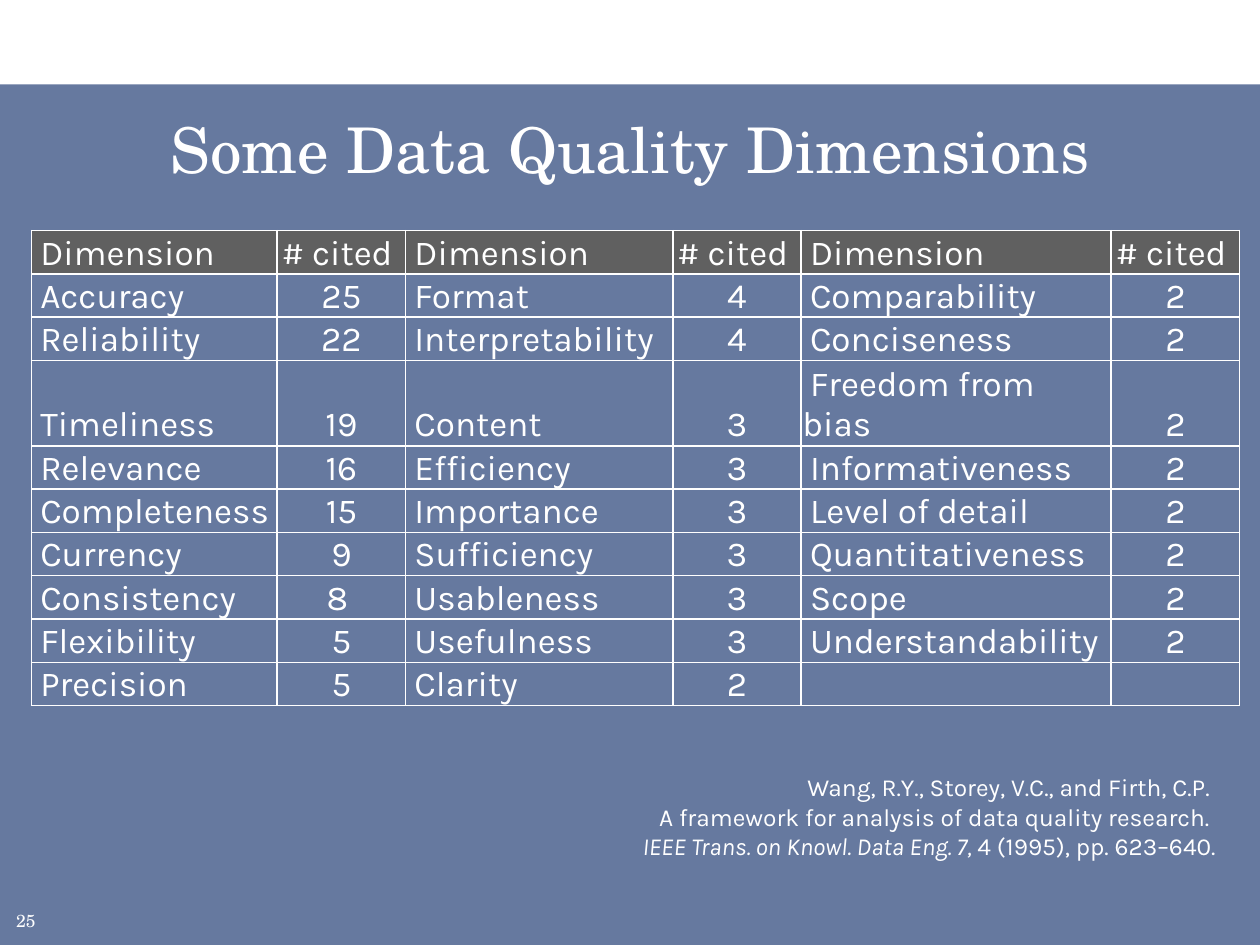
"""Build a slide that tables data quality dimensions by citation count."""
from dataclasses import dataclass
from typing import Any

import pptx
import pptx.dml.color
import pptx.enum.shapes
import pptx.enum.text
import pptx.oxml
import pptx.oxml.ns
import pptx.util
from pptx.util import Inches

ALIGN = pptx.enum.text.PP_ALIGN
ANCHOR = pptx.enum.text.MSO_ANCHOR


@dataclass(frozen=True)
class Theme:
    band: str = "002060"
    head: str = "606060"
    ink: str = "FFFFFF"
    serif: str = "TeX Gyre Schola"
    sans: str = "Karla"
    title: float = 36
    cell: float = 20
    cite: float = 14
    page: float = 10


@dataclass(frozen=True)
class Box:
    left: float
    top: float
    width: float
    height: float

    def lengths(self) -> list[int]:
        return [Inches(n) for n in (self.left, self.top, self.width, self.height)]


@dataclass(frozen=True)
class Entry:
    name: str
    count: str


THEME = Theme()
WIDTHS = (1.95, 1.02, 2.12, 1.02, 2.46, 1.02)
ROW = 0.21
HEAD = Entry("Dimension", "# cited ")
GROUPS = (
    (HEAD, Entry("Accuracy", "25"), Entry("Reliability", "22"),
     Entry("Timeliness", "19"), Entry("Relevance", "16"),
     Entry("Completeness", "15"), Entry("Currency", "9"),
     Entry("Consistency", "8 "), Entry("Flexibility", "5"),
     Entry("Precision", "5")),
    (HEAD, Entry("Format", "4"), Entry("Interpretability", "4"),
     Entry("Content", "3"), Entry("Efficiency", "3"),
     Entry("Importance", "3"), Entry("Sufficiency", "3"),
     Entry("Usableness", "3"), Entry("Usefulness", "3"),
     Entry("Clarity", "2")),
    (HEAD, Entry("Comparability", "2"), Entry("Conciseness", "2"),
     Entry("Freedom from bias", "2"), Entry("Informativeness", "2"),
     Entry("Level of detail", "2"), Entry("Quantitativeness", "2"),
     Entry("Scope", "2"), Entry("Understandability", "2"),
     Entry("", "")),
)
CITE = (
    (("Wang, R.Y., Storey, V.C., and Firth, C.P. ", False),),
    (("A framework for analysis of data quality research. ", False),),
    (("IEEE Trans. on Knowl. Data Eng. 7, ", True),
     ("4 (1995), pp. 623–640.", False)),
)


def paint(fill: Any, color: str) -> None:
    fill.solid()
    fill.fore_color.rgb = pptx.dml.color.RGBColor.from_string(color)


def write(para: Any, text: str, *, size: float, face: str = THEME.sans,
          align: Any = ALIGN.LEFT, slant: bool = False) -> None:
    para.alignment = align
    para.font.size = pptx.util.Pt(size)
    if text:
        run = para.add_run()
        run.text = text
        font = run.font
        font.name, font.size = face, pptx.util.Pt(size)
        font.bold, font.italic = False, slant
        font.color.rgb = pptx.dml.color.RGBColor.from_string(THEME.ink)


def edge(cell: Any) -> None:
    props = cell._tc.get_or_add_tcPr()
    for place, side in enumerate(("lnL", "lnR", "lnT", "lnB")):
        line = pptx.oxml.parse_xml(
            f'<a:{side} {pptx.oxml.ns.nsdecls("a")} w="12700"><a:solidFill>'
            f'<a:srgbClr val="{THEME.ink}"/></a:solidFill></a:{side}>')
        props.insert(place, line)


def fill_cell(cell: Any, text: str, head: bool, label: bool) -> None:
    cell.margin_left = cell.margin_right = cell.margin_top = Inches(0.01)
    cell.margin_bottom = 0
    cell.vertical_anchor = ANCHOR.BOTTOM
    if head:
        paint(cell.fill, THEME.head)
    else:
        cell.fill.background()
    edge(cell)
    para = cell.text_frame.paragraphs[0]
    if label:
        para._p.get_or_add_pPr().set("indent", str(Inches(0.06)))
    write(para, text, size=THEME.cell,
          align=ALIGN.LEFT if label else ALIGN.CENTER)


def add_grid(slide: Any) -> None:
    count = len(GROUPS[0])
    box = Box(0.25, 1.83, sum(WIDTHS), ROW * count)
    grid = slide.shapes.add_table(count, len(WIDTHS), *box.lengths()).table
    grid.first_row = grid.horz_banding = False
    for col, width in zip(grid.columns, WIDTHS):
        col.width = Inches(width)
    for row in grid.rows:
        row.height = Inches(ROW)
    for pair, group in enumerate(GROUPS):
        for row, entry in enumerate(group):
            fill_cell(grid.cell(row, 2 * pair), entry.name, row == 0, True)
            fill_cell(grid.cell(row, 2 * pair + 1), entry.count, row == 0, False)


def add_band(slide: Any) -> None:
    band = slide.shapes.add_shape(pptx.enum.shapes.MSO_SHAPE.RECTANGLE,
                                  *Box(0, 0.67, 10, 6.83).lengths())
    band.shadow.inherit = False
    band.line.fill.background()
    paint(band.fill, THEME.band)
    color = band._element.spPr.find(".//" + pptx.oxml.ns.qn("a:srgbClr"))
    color.append(pptx.oxml.parse_xml(
        f'<a:alpha {pptx.oxml.ns.nsdecls("a")} val="60000"/>'))
    slide.shapes._spTree.insert(2, band._element)


def add_title(slide: Any) -> None:
    title = slide.shapes.title
    title.left, title.top, title.width, title.height = Box(
        0.25, 0.83, 9.5, 0.83).lengths()
    frame = title.text_frame
    frame.auto_size = pptx.enum.text.MSO_AUTO_SIZE.NONE
    frame.vertical_anchor = ANCHOR.TOP
    write(frame.paragraphs[0], "Some Data Quality Dimensions",
          size=THEME.title, face=THEME.serif, align=ALIGN.CENTER)


def add_frame(slide: Any, box: Box) -> Any:
    frame = slide.shapes.add_textbox(*box.lengths()).text_frame
    frame.word_wrap = True
    return frame


def add_cite(slide: Any) -> None:
    frame = add_frame(slide, Box(1.75, 6.08, 8, 0.81))
    for place, line in enumerate(CITE):
        para = frame.add_paragraph() if place else frame.paragraphs[0]
        for text, slant in line:
            write(para, text, size=THEME.cite, align=ALIGN.RIGHT, slant=slant)


def main() -> None:
    deck = pptx.Presentation()
    deck.slide_width, deck.slide_height = Inches(10), Inches(7.5)
    slide = deck.slides.add_slide(deck.slide_layouts.get_by_name("Title Only"))
    paint(slide.background.fill, THEME.ink)
    add_band(slide)
    page = add_frame(slide, Box(0.03, 7.17, 0.39, 0.25))
    write(page.paragraphs[0], "25", size=THEME.page, face=THEME.serif)
    add_title(slide)
    add_grid(slide)
    add_cite(slide)
    deck.save("out.pptx")


if __name__ == "__main__":
    main()
